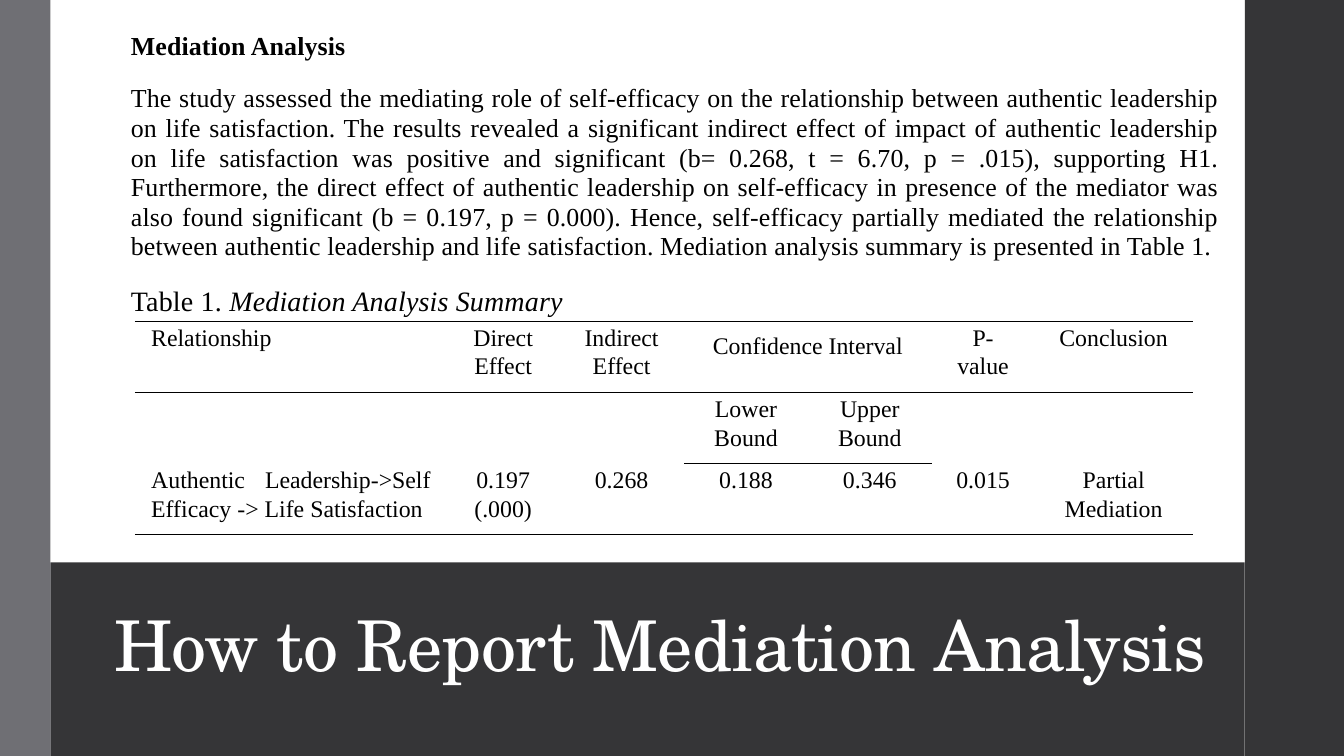
from lxml.etree import SubElement
from pptx import Presentation
from pptx.dml.color import RGBColor
from pptx.enum.shapes import MSO_SHAPE
from pptx.enum.text import MSO_ANCHOR, MSO_AUTO_SIZE, PP_ALIGN
from pptx.oxml import parse_xml
from pptx.oxml.ns import nsdecls, qn
from pptx.util import Cm, Pt

COLOURS = {"white": "FFFFFF", "dark": "353537", "grey": "6F6F74", "black": "000000"}
SERIF = "Times New Roman"
PLAIN_TABLE_STYLE = "{2D5ABB26-0587-4C30-8999-92F81FD0307C}"

BODY_PARAGRAPH = {"alignment": PP_ALIGN.JUSTIFY, "line_spacing": 0.95,
                  "space_before": Pt(14), "space_after": Pt(2)}
TITLE_PARAGRAPH = {"alignment": PP_ALIGN.LEFT, "line_spacing": 0.85}
TITLE_FONT = {"name": "TeX Gyre Schola", "size": Pt(50)}
BODY_FONT = {"name": SERIF, "size": Pt(18.5)}
CAPTION_FONT = {"name": SERIF, "size": Pt(20)}
TABLE_FONT = {"name": SERIF, "size": Pt(17)}

PANELS = [
    ("white", 1.27, 0, 30.1, 14.17),
    ("dark", 1.27, 14.17, 30.1, 4.88),
    ("grey", 0, 0, 1.27, 19.05),
    ("dark", 31.37, 0, 2.5, 19.05),
]
REPORT = (
    "The study assessed the mediating role of self-efficacy on the relationship between "
    "authentic leadership on life satisfaction. The results revealed a significant indirect "
    "effect of impact of authentic leadership on life satisfaction was positive and significant "
    "(b= 0.268, t = 6.70, p = .015), supporting H1. Furthermore, the direct effect of authentic "
    "leadership on self-efficacy in presence of the mediator was also found significant "
    "(b = 0.197, p = 0.000). Hence, self-efficacy partially mediated the relationship between "
    "authentic leadership and life satisfaction. Mediation analysis summary is presented in Table 1."
)
COLUMN_WIDTHS = [7.87, 2.82, 3.15, 3.12, 3.12, 2.59, 3.99]
ROW_HEIGHT = 1.79
INTERVAL_COLUMNS = (3, 4)
SUMMARY = [
    ["Relationship", "Direct Effect", "Indirect Effect", "Confidence Interval", "",
     "P-value", "Conclusion"],
    ["", "", "", "Lower Bound", "Upper Bound", "", ""],
    ["Authentic Leadership->Self Efficacy -> Life Satisfaction", "0.197 (.000)", "0.268",
     "0.188", "0.346", "0.015", "Partial Mediation"],
]


def apply_format(target, values):
    """Set each attribute named in values on target."""
    for name, value in values.items():
        setattr(target, name, value)


def add_run(paragraph, text, font_format, colour="black", tracking=0):
    """Add a formatted run, with tracking in hundredths of a point."""
    run = paragraph.add_run()
    run.text = text
    apply_format(run.font, font_format)
    run.font.color.rgb = RGBColor.from_string(COLOURS[colour])
    if tracking:
        run.font._element.set("spc", str(tracking))


def add_panel(slide, colour, left, top, width, height):
    """Add a filled rectangle without outline."""
    shape = slide.shapes.add_shape(MSO_SHAPE.RECTANGLE, Cm(left), Cm(top), Cm(width), Cm(height))
    shape.shadow.inherit = False
    shape.fill.solid()
    shape.fill.fore_color.rgb = RGBColor.from_string(COLOURS[colour])
    shape.line.fill.background()


def place_title(slide, text):
    """Fill the title placeholder and raise it above the panels."""
    title = slide.shapes.title
    apply_format(title, {"left": Cm(2.62), "top": Cm(14.4), "width": Cm(28.22), "height": Cm(3)})
    apply_format(title.text_frame, {"vertical_anchor": MSO_ANCHOR.BOTTOM, "word_wrap": True,
                                    "auto_size": MSO_AUTO_SIZE.NONE})
    paragraph = title.text_frame.paragraphs[0]
    apply_format(paragraph, TITLE_PARAGRAPH)
    add_run(paragraph, text, TITLE_FONT, "white", -50)
    slide.shapes._spTree.append(title._element)


def add_text(slide, top, width, height, paragraphs):
    """Add a text box from paragraphs given as lists of text and font format."""
    box = slide.shapes.add_textbox(Cm(3.05), Cm(top), Cm(width), Cm(height))
    frame = box.text_frame
    frame.word_wrap = True
    for index, runs in enumerate(paragraphs):
        paragraph = frame.add_paragraph() if index else frame.paragraphs[0]
        apply_format(paragraph, BODY_PARAGRAPH)
        for text, font_format in runs:
            add_run(paragraph, text, font_format, tracking=10)


def has_rule(row, column):
    """Tell whether a line runs along the top of this row in this column."""
    return row != 2 or column in INTERVAL_COLUMNS


def add_borders(cell, row, column):
    """Draw the ruled horizontal edges of a cell and hide the others."""
    properties = cell._tc.get_or_add_tcPr()
    ruled = {"lnL": False, "lnR": False,
             "lnT": has_rule(row, column), "lnB": has_rule(row + 1, column)}
    for position, (edge, visible) in enumerate(ruled.items()):
        line = parse_xml(f'<a:{edge} {nsdecls("a")} w="{Pt(1)}"/>')
        if visible:
            fill = SubElement(line, qn("a:solidFill"))
            SubElement(fill, qn("a:srgbClr")).set("val", COLOURS["black"])
        else:
            SubElement(line, qn("a:noFill"))
        properties.insert(position, line)


def fill_cell(cell, text, column, spanning):
    """Write and space the text of one table cell."""
    side, top, bottom = (0.53, 0.25, 0.25) if spanning else (0.41, 0.05, 0)
    apply_format(cell, {"margin_left": Cm(side), "margin_right": Cm(side),
                        "margin_top": Cm(top), "margin_bottom": Cm(bottom)})
    cell.fill.background()
    if text:
        paragraph = cell.text_frame.paragraphs[0]
        paragraph.alignment = PP_ALIGN.CENTER if column else PP_ALIGN.JUSTIFY
        paragraph.line_spacing = 1.07
        add_run(paragraph, text, TABLE_FONT)


def add_summary_table(slide):
    """Add the mediation summary with horizontal rules only."""
    frame = slide.shapes.add_table(len(SUMMARY), len(COLUMN_WIDTHS), Cm(3.4), Cm(8.1),
                                   Cm(sum(COLUMN_WIDTHS)), Cm(ROW_HEIGHT * len(SUMMARY)))
    table = frame.table
    apply_format(table, {"first_row": False, "horz_banding": False})
    table._tbl.tblPr.find(qn("a:tableStyleId")).text = PLAIN_TABLE_STYLE
    for column, width in zip(table.columns, COLUMN_WIDTHS):
        column.width = Cm(width)
    first, last = INTERVAL_COLUMNS
    table.cell(0, first).merge(table.cell(0, last))
    for row, texts in enumerate(SUMMARY):
        table.rows[row].height = Cm(ROW_HEIGHT)
        for column, text in enumerate(texts):
            cell = table.cell(row, column)
            fill_cell(cell, text, column, cell.is_merge_origin)
            add_borders(cell, row, column)


def main():
    """Build the slide and save it."""
    presentation = Presentation()
    apply_format(presentation, {"slide_width": Cm(33.87), "slide_height": Cm(19.05)})
    slide = presentation.slides.add_slide(presentation.slide_layouts[5])
    for panel in PANELS:
        add_panel(slide, *panel)
    place_title(slide, "How to Report Mediation Analysis")
    add_summary_table(slide)
    add_text(slide, 0.69, 27.94, 6.2, [
        [("Mediation Analysis", {**BODY_FONT, "bold": True})],
        [(REPORT, BODY_FONT)],
    ])
    add_text(slide, 7.09, 28.12, 1.14, [
        [("Table 1. ", CAPTION_FONT),
         ("Mediation Analysis Summary", {**CAPTION_FONT, "italic": True})],
    ])
    presentation.save("out.pptx")


if __name__ == "__main__":
    main()
